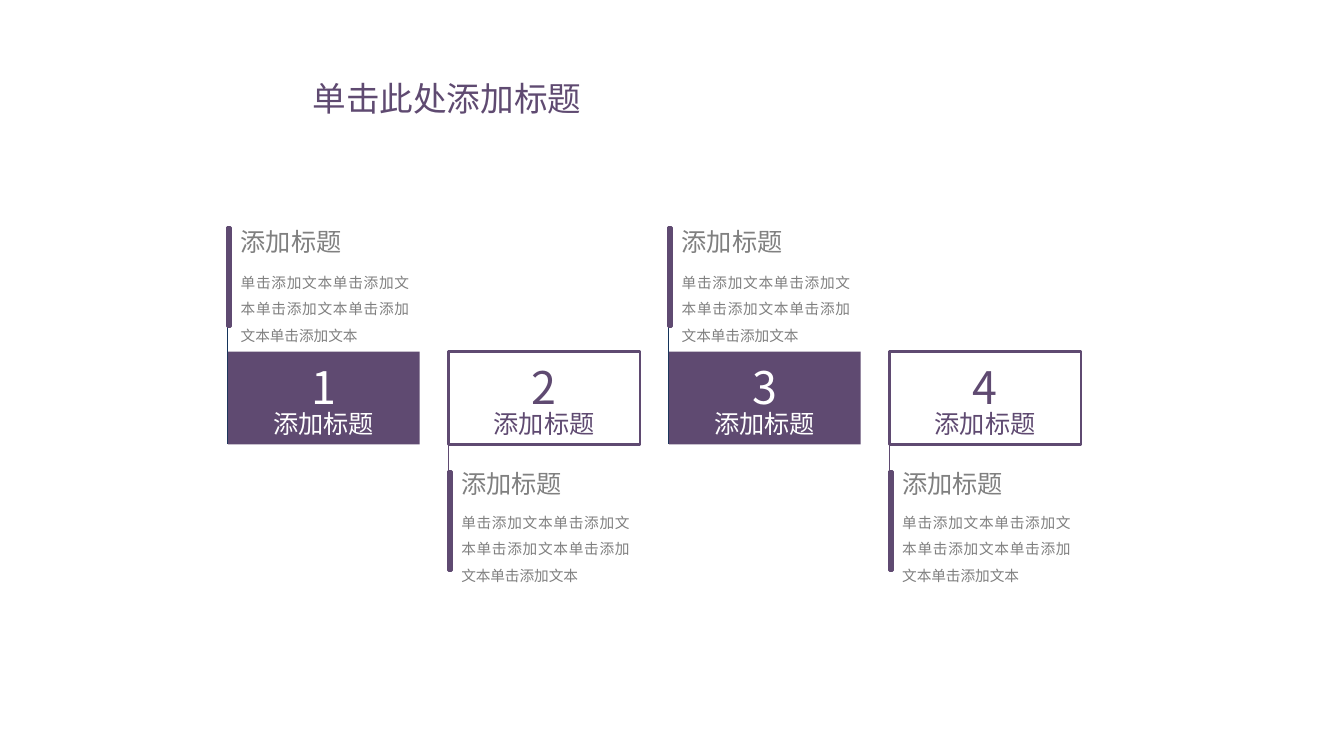
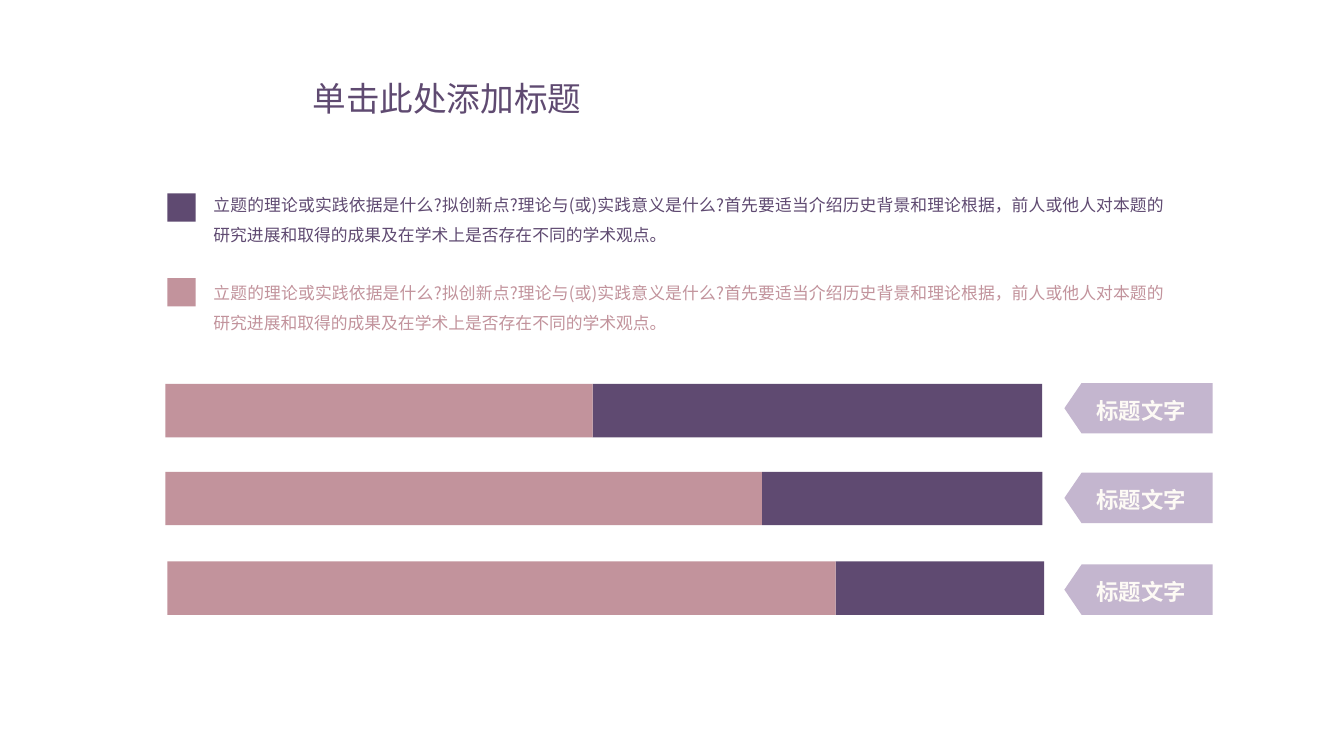
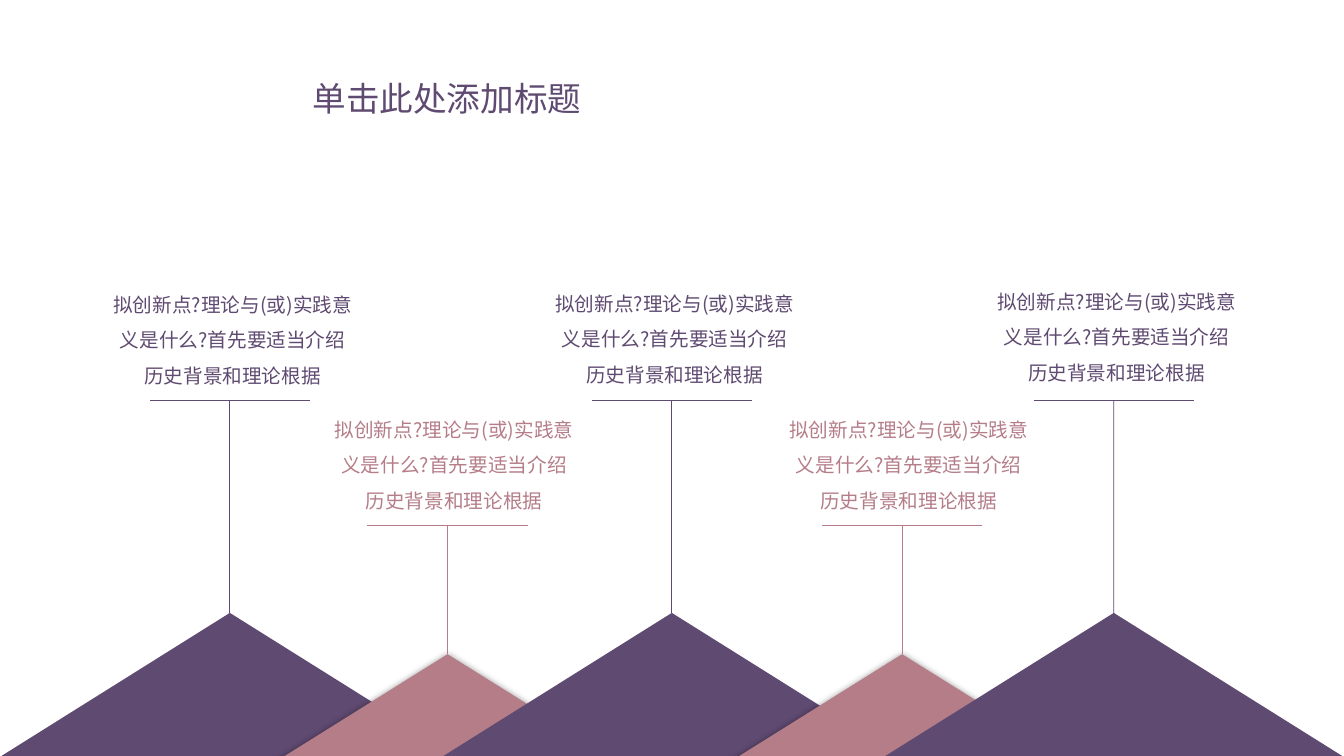
from lxml.etree import SubElement
from pptx import Presentation
from pptx.dml.color import RGBColor
from pptx.enum.shapes import MSO_CONNECTOR, MSO_SHAPE
from pptx.enum.text import MSO_ANCHOR, MSO_AUTO_SIZE, PP_ALIGN
from pptx.oxml.ns import qn
from pptx.util import Pt

FONT = "Noto Sans CJK SC"
COLORS = {
    "purple": "5F4A71",
    "pink": "C2939C",
    "rose": "B57D88",
    "lilac": "C4B6CF",
    "orange": "ED7D31",
    "navy": "14345A",
    "gray": "808080",
    "cream": "FDFAF5",
    "white": "FFFFFF",
    "black": "000000",
}

TITLE = "单击此处添加标题"

STEP_HEADING = "添加标题"
STEP_DETAIL = "单击添加文本" * 5
STEPS = [  # number, notes above the card, bar fill
    ("1", True, "purple"),
    ("2", False, "orange"),
    ("3", True, "purple"),
    ("4", False, "purple"),
]

LEGEND_TEXT = (
    "立题的理论或实践依据是什么?拟创新点?理论与(或)实践意义是什么?"
    "首先要适当介绍历史背景和理论根据，前人或他人对本题的研究进展"
    "和取得的成果及在学术上是否存在不同的学术观点。"
)
LEGEND = [  # colour, marker top, text top
    ("purple", 138.2, 129.6),
    ("pink", 198.7, 192.2),
]
TAG_TEXT = "标题文字"
BARS = [  # left, top, pink length, tag top
    (118.1, 274.3, 305.3, 273.6),
    (118.1, 337, 426.2, 337.7),
    (119.5, 401, 477.4, 403.2),
]

PEAK_TEXT = "拟创新点?理论与(或)实践意义是什么?首先要适当介绍历史背景和理论根据"
PEAK_SIZES = {  # width, top, rule height, text offset from the peak
    "purple": (381.6, 437.8, 285.8, 2),
    "rose": (288, 467.3, 375.1, 4.7),
}
PEAKS = [  # colour, peak position, text top
    ("purple", 164.2, 197.3),
    ("rose", 319.7, 286.6),
    ("purple", 479.9, 196.6),
    ("rose", 644.4, 286.6),
    ("purple", 795.6, 195.1),
]


def rgb(color):
    return RGBColor.from_string(COLORS[color])


def write(box, text, size, color, align=PP_ALIGN.LEFT, spacing=None,
          wrap=True, anchor=MSO_ANCHOR.TOP, bold=False):
    """Fill a box with one paragraph in the deck's font."""
    frame = box.text_frame
    frame.text = text
    frame.auto_size = MSO_AUTO_SIZE.NONE
    frame.word_wrap = wrap
    frame.vertical_anchor = anchor
    para = frame.paragraphs[0]
    para.alignment = align
    if spacing:
        para.line_spacing = spacing
    span = para.runs[0]
    span.font.name = FONT
    span.font.size = Pt(size)
    span.font.bold = bold
    span.font.color.rgb = rgb(color)
    SubElement(span.font._element, qn("a:ea"), typeface=FONT)


def add_text(page, left, top, width, height, *content, **style):
    box = page.shapes.add_textbox(Pt(left), Pt(top), Pt(width), Pt(height))
    write(box, *content, **style)


def paint(shape, fill=None, line=None):
    shape.shadow.inherit = False
    if fill:
        shape.fill.solid()
        shape.fill.fore_color.rgb = rgb(fill)
    else:
        shape.fill.background()
    if line:
        shape.line.color.rgb = rgb(line)
        shape.line.width = Pt(2)
    else:
        shape.line.fill.background()


def add_block(page, left, top, width, height, fill=None, line=None,
              kind=MSO_SHAPE.RECTANGLE):
    shape = page.shapes.add_shape(kind, Pt(left), Pt(top), Pt(width), Pt(height))
    paint(shape, fill, line)
    return shape


def add_line(page, start, end, color, weight):
    line = page.shapes.add_connector(
        MSO_CONNECTOR.STRAIGHT, *(Pt(value) for value in (*start, *end)))
    line.line.color.rgb = rgb(color)
    line.line.width = Pt(weight)
    SubElement(line._element.spPr, qn("a:effectLst"))
    return line


def add_glow(shape):
    """Give a shape a soft shadow spreading evenly on all sides."""
    effects = shape._element.spPr.find(qn("a:effectLst"))
    shadow = SubElement(effects, qn("a:outerShdw"), blurRad=str(Pt(5)),
                        dist="0", dir="0", algn="ctr", rotWithShape="0")
    color = SubElement(shadow, qn("a:srgbClr"), val=COLORS["black"])
    SubElement(color, qn("a:alpha"), val="40000")


def add_page(deck):
    page = deck.slides.add_slide(deck.slide_layouts[5])
    title = page.shapes.title
    title.left, title.top, title.width, title.height = (
        Pt(value) for value in (215.3, 51.8, 208, 36))
    write(title, TITLE, 24, "purple", align=PP_ALIGN.CENTER, wrap=False)
    return page


def build_steps(page):
    first_left, pitch = 162.7, 157.5
    card_top, card_width, card_height = 251.2, 137, 66.3
    card_bottom = card_top + card_height
    bar_height = 70.5
    for index, (number, above, bar_fill) in enumerate(STEPS):
        left = first_left + index * pitch
        if above:
            bar_top, heading_top, detail_top = 162.7, 160.6, 185.8
            line_ends, line_color = (bar_top, card_bottom), "navy"
            card_fill, border, ink = "purple", None, "white"
        else:
            bar_top, heading_top, detail_top = 337, 333.4, 357.1
            line_ends, line_color = (bar_top + bar_height, card_top), "purple"
            card_fill, border, ink = None, "purple", "purple"

        add_line(page, (left, line_ends[0]), (left, line_ends[1]), line_color, 0.75)
        add_block(page, left, bar_top, 2.2, bar_height, bar_fill, "purple")
        add_text(page, left + 2.2, heading_top, 134.6, 26.6, STEP_HEADING,
                 18, "gray", align=PP_ALIGN.JUSTIFY, spacing=0.9)
        add_text(page, left + 2.2, detail_top, 134.6, 64.8, STEP_DETAIL,
                 10.5, "gray", align=PP_ALIGN.JUSTIFY, spacing=1.5)

        add_block(page, left, card_top, card_width, card_height, card_fill, border)
        for text, size, top, width, height in (
                (STEP_HEADING, 18, 290.2, 125.3, 26.6),
                (number, 32, 257.8, 70.6, 42.5)):
            add_text(page, left + (card_width - width) / 2, top, width, height,
                     text, size, ink, align=PP_ALIGN.CENTER, spacing=0.9)


def add_tag(page, top):
    tip, shoulder, right, height = 760.3, 772.6, 866.2, 36
    outline = page.shapes.build_freeform(Pt(shoulder), Pt(top))
    corners = [(tip, top + height / 2), (shoulder, top + height),
               (right, top + height), (right, top)]
    outline.add_line_segments([(Pt(x), Pt(y)) for x, y in corners])
    paint(outline.convert_to_shape(), "lilac")
    add_text(page, 776.2, top + 6.2, 79.2, 26.6, TAG_TEXT, 16, "cream",
             wrap=False, bold=True)


def build_bars(page):
    bar_length, bar_height, marker = 626.4, 38.2, 20.2
    for color, marker_top, text_top in LEGEND:
        add_block(page, 119.5, marker_top, marker, marker, color)
        add_text(page, 145.4, text_top, 693.4, 48.2, LEGEND_TEXT, 12, color,
                 align=PP_ALIGN.JUSTIFY, spacing=1.5, anchor=MSO_ANCHOR.MIDDLE)
    for left, top, pink_length, tag_top in BARS:
        add_block(page, left + pink_length, top, bar_length - pink_length,
                  bar_height, "purple")
        add_block(page, left, top, pink_length, bar_height, "pink")
        add_tag(page, tag_top)


def build_peaks(page):
    base, half_rule, text_width = 557.3, 57.2, 188
    mountains = []
    for color, center, _ in PEAKS:
        width, top, _, _ = PEAK_SIZES[color]
        mountain = add_block(page, center - width / 2, top, width, base - top,
                             color, kind=MSO_SHAPE.ISOSCELES_TRIANGLE)
        if color == "rose":
            add_glow(mountain)
        mountains.append(mountain)
    for mountain, (color, center, text_top) in zip(mountains, PEAKS):
        _, top, rule_top, text_shift = PEAK_SIZES[color]
        stem = add_line(page, (center, top), (center, rule_top), color, 0.5)
        stem.begin_connect(mountain, 0)
        add_line(page, (center - half_rule, rule_top),
                 (center + half_rule, rule_top), color, 0.5)
        add_text(page, center + text_shift - text_width / 2, text_top,
                 text_width, 80.6, PEAK_TEXT, 14, color,
                 align=PP_ALIGN.CENTER, spacing=1.5)


def main():
    deck = Presentation()
    deck.slide_width, deck.slide_height = Pt(960), Pt(540)
    for build in (build_steps, build_bars, build_peaks):
        build(add_page(deck))
    deck.save("out.pptx")


if __name__ == "__main__":
    main()
